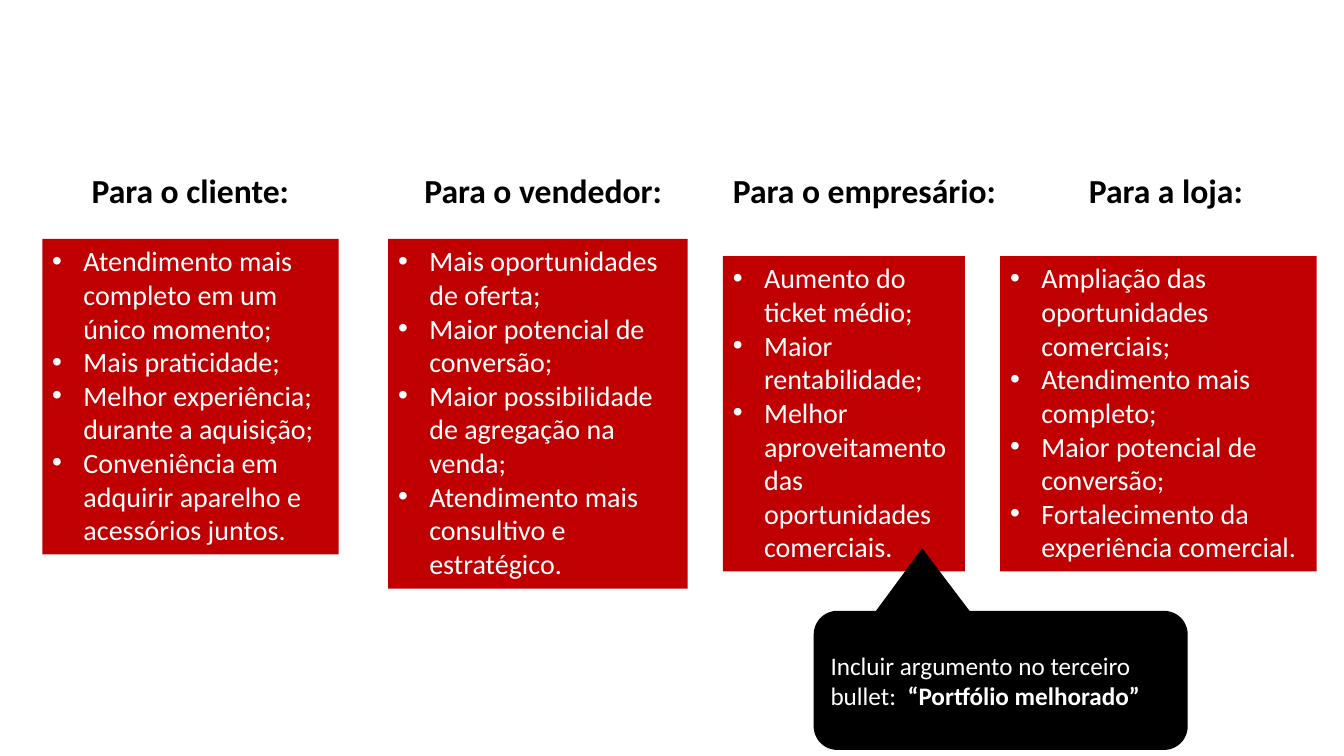
from lxml.etree import SubElement
from pptx import Presentation
from pptx.dml.color import RGBColor
from pptx.enum.shapes import MSO_SHAPE as Shape
from pptx.enum.text import MSO_ANCHOR as Anchor, MSO_AUTO_SIZE as AutoSize, PP_ALIGN as Align
from pptx.oxml.ns import qn
from pptx.util import Inches, Pt

COLORS = {"red": "C00000", "black": "000000", "white": "FFFFFF"}
FONT = "Calibri"
HEADING_TOP = 1.64
HEADING_HEIGHT = 0.5
BULLET_INDENT = Inches(0.31)

COLUMNS = [
    ("Para o cliente:", (0.81, 2.54), (0.42, 2.37, 2.94, 3.13), [
        "Atendimento mais completo em um único momento;",
        "Mais praticidade;",
        "Melhor experiência; durante a aquisição;",
        "Conveniência em adquirir aparelho e acessórios juntos.",
    ]),
    ("Para o vendedor:", (4.11, 2.97), (3.85, 2.37, 2.97, 3.47), [
        "Mais oportunidades de oferta;",
        "Maior potencial de conversão;",
        "Maior possibilidade de agregação na venda;",
        "Atendimento mais consultivo e estratégico.",
    ]),
    ("Para o empresário:", (7.17, 2.97), (7.17, 2.54, 2.4, 3.13), [
        "Aumento do ticket médio;",
        "Maior rentabilidade;",
        "Melhor aproveitamento das oportunidades comerciais.",
    ]),
    ("Para a loja:", (10.7, 1.98), (9.92, 2.54, 3.14, 3.13), [
        "Ampliação das oportunidades comerciais;",
        "Atendimento mais completo;",
        "Maior potencial de conversão;",
        "Fortalecimento da experiência comercial.",
    ]),
]


def color(name):
    return RGBColor.from_string(COLORS[name])


def style(font, size, color_name, bold=None):
    font.name = FONT
    font.size = Pt(size)
    font.color.rgb = color(color_name)
    font.bold = bold


def add_heading(page, text, left, width):
    box = page.shapes.add_textbox(
        Inches(left), Inches(HEADING_TOP), Inches(width), Inches(HEADING_HEIGHT))
    box.text_frame.word_wrap = True
    box.text_frame.auto_size = AutoSize.SHAPE_TO_FIT_TEXT
    para = box.text_frame.paragraphs[0]
    para.text = text
    style(para.font, 24, "black", True)


def add_panel(page, preset, area, fill, anchor):
    panel = page.shapes.add_shape(preset, *map(Inches, area))
    panel.shadow.inherit = False
    panel.fill.solid()
    panel.fill.fore_color.rgb = color(fill)
    panel.line.fill.background()
    panel.text_frame.word_wrap = True
    panel.text_frame.vertical_anchor = anchor
    return panel


def add_bullet(para):
    properties = para._p.get_or_add_pPr()
    properties.set("marL", str(BULLET_INDENT))
    properties.set("indent", str(-BULLET_INDENT))
    SubElement(properties, qn("a:buFont"), typeface="Arial")
    SubElement(properties, qn("a:buChar"), char="•")


def add_benefits(page, area, benefits):
    panel = add_panel(page, Shape.RECTANGLE, area, "red", Anchor.TOP)
    frame = panel.text_frame
    frame.auto_size = AutoSize.SHAPE_TO_FIT_TEXT
    for index, benefit in enumerate(benefits):
        para = frame.add_paragraph() if index else frame.paragraphs[0]
        para.text = benefit
        para.alignment = Align.LEFT
        add_bullet(para)
        style(para.font, 20, "white")


def add_callout(page, area, adjustments, lead, emphasis):
    callout = add_panel(
        page, Shape.ROUNDED_RECTANGULAR_CALLOUT, area, "black", Anchor.MIDDLE)
    for index, value in enumerate(adjustments):
        callout.adjustments[index] = value
    para = callout.text_frame.paragraphs[0]
    para.alignment = Align.LEFT
    style(para.font, 18, "white")
    para.add_run().text = lead
    span = para.add_run()
    span.text = emphasis
    span.font.bold = True


def main():
    deck = Presentation()
    deck.slide_width = Inches(13.33)
    deck.slide_height = Inches(7.5)
    page = deck.slides.add_slide(deck.slide_layouts[6])
    for heading, (left, width), area, benefits in COLUMNS:
        add_heading(page, heading, left, width)
        add_benefits(page, area, benefits)
    add_callout(page, (8.07, 6.06, 3.71, 1.38), (-0.21, -0.95, 0.17),
                "Incluir argumento no terceiro bullet:  ", "“Portfólio melhorado”")
    deck.save("out.pptx")


if __name__ == "__main__":
    main()
